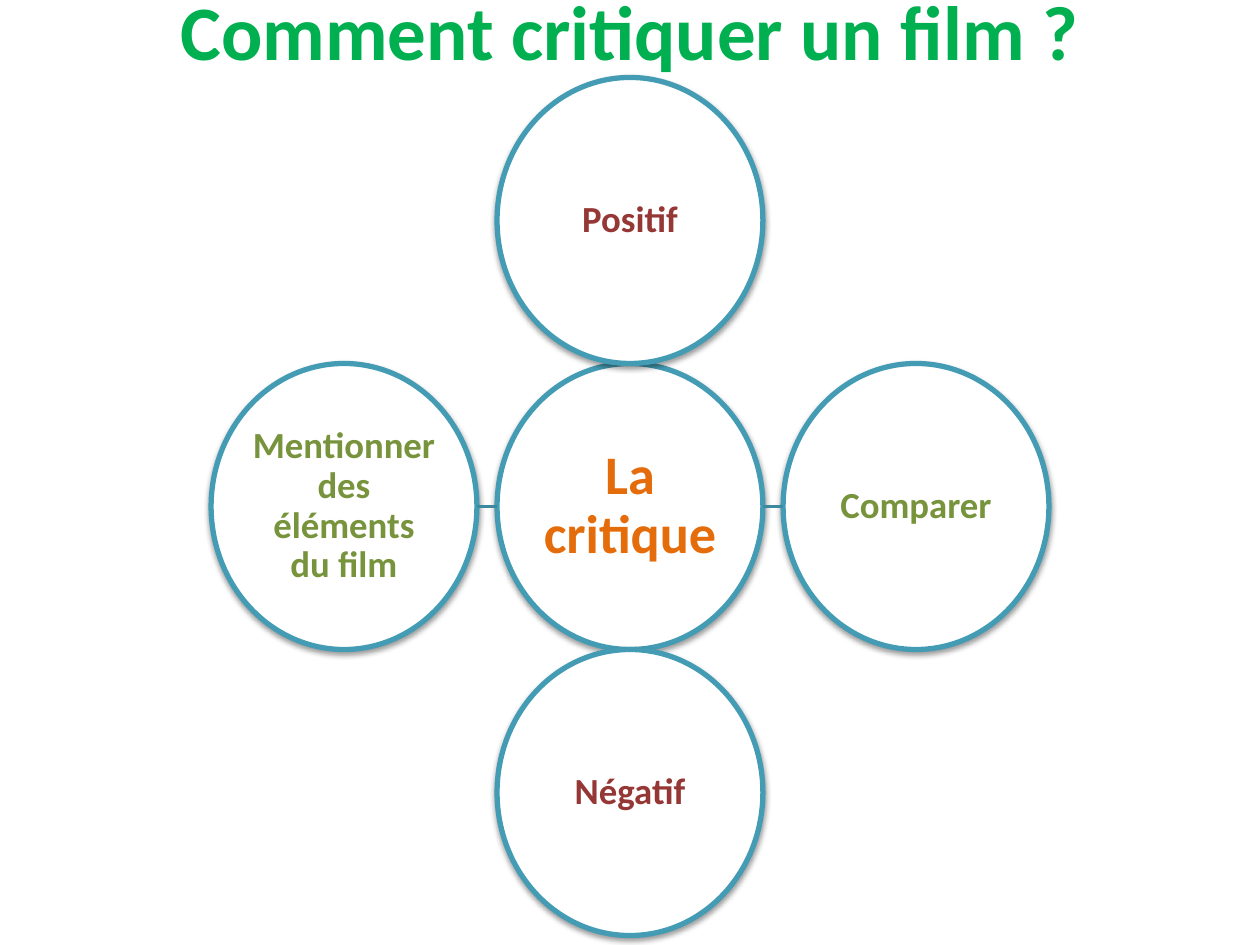
from dataclasses import dataclass
from lxml import etree
from pptx import Presentation
from pptx.dml.color import RGBColor as RGB
from pptx.enum.shapes import MSO_CONNECTOR as CONN, MSO_SHAPE as SHAPE
from pptx.enum.text import MSO_ANCHOR as ANCHOR, PP_ALIGN as ALIGN
from pptx.oxml.ns import qn
from pptx.util import Inches, Pt


@dataclass(frozen=True)
class Theme:
    font: str = "Calibri"
    title: RGB = RGB(0x00, 0xB0, 0x50)
    center: RGB = RGB(0xE4, 0x6C, 0x0A)
    opinion: RGB = RGB(0x95, 0x37, 0x35)
    method: RGB = RGB(0x77, 0x93, 0x3C)
    ring: RGB = RGB(0x44, 0x9C, 0xB4)
    link: RGB = RGB(0x3C, 0x8A, 0x9F)
    white: RGB = RGB(0xFF, 0xFF, 0xFF)
    title_size: int = 44
    center_size: int = 31
    label_size: int = 21


theme = Theme()


def style_text(tf, text, size, color):
    tf.word_wrap = True
    tf.vertical_anchor = ANCHOR.MIDDLE
    p = tf.paragraphs[0]
    p.text = text
    p.alignment = ALIGN.CENTER
    p.font.name, p.font.size, p.font.bold = theme.font, Pt(size), True
    p.font.color.rgb = color
    return p


def add_soft_shadow(sp):
    sp.shadow.inherit = False
    effects = sp._element.spPr.find(qn("a:effectLst"))
    shadow = etree.SubElement(effects, qn("a:outerShdw"), blurRad="40000",
                              dist="20000", dir="5400000", rotWithShape="0")
    color = etree.SubElement(shadow, qn("a:srgbClr"), val="000000")
    etree.SubElement(color, qn("a:alpha"), val="38000")


prs = Presentation()
prs.slide_width, prs.slide_height = Inches(10), Inches(7.5)
s = prs.slides.add_slide(prs.slide_layouts[5])

# Title
title = s.shapes.title
title.left, title.top = Inches(0.5), Inches(-0.39)
title.width, title.height = Inches(9), Inches(1.25)
style_text(title.text_frame, "Comment critiquer un film ?", theme.title_size, theme.title)

# Circles: text, column and row offset from the center, size, color
CX, CY, W, H = 5, 4.02, 2.11, 2.27
STEP = 2.27
circles = [
    ("La critique", 0, 0, theme.center_size, theme.center),
    ("Positif", 0, -1, theme.label_size, theme.opinion),
    ("Comparer", 1, 0, theme.label_size, theme.method),
    ("Négatif", 0, 1, theme.label_size, theme.opinion),
    ("Mentionner des éléments du film", -1, 0, theme.label_size, theme.method),
]
for text, col, row, size, color in circles:
    sp = s.shapes.add_shape(SHAPE.OVAL, Inches(CX + col * STEP - W / 2),
                            Inches(CY + row * STEP - H / 2), Inches(W), Inches(H))
    sp.fill.solid()
    sp.fill.fore_color.rgb = theme.white
    sp.line.color.rgb = theme.ring
    sp.line.width = Pt(3)
    add_soft_shadow(sp)
    tf = sp.text_frame
    tf.margin_left = tf.margin_right = tf.margin_top = tf.margin_bottom = Inches(0.01)
    style_text(tf, text, size, color).line_spacing = 0.9

# Links from the center to the side circles (the upper and lower ones touch it)
for side in (-1, 1):
    link = s.shapes.add_connector(CONN.STRAIGHT, Inches(CX + side * W / 2), Inches(CY),
                                  Inches(CX + side * (STEP - W / 2)), Inches(CY))
    link.line.color.rgb = theme.link
    link.line.width = Pt(2)
    etree.SubElement(link._element.spPr, qn("a:effectLst"))

prs.save("out.pptx")
